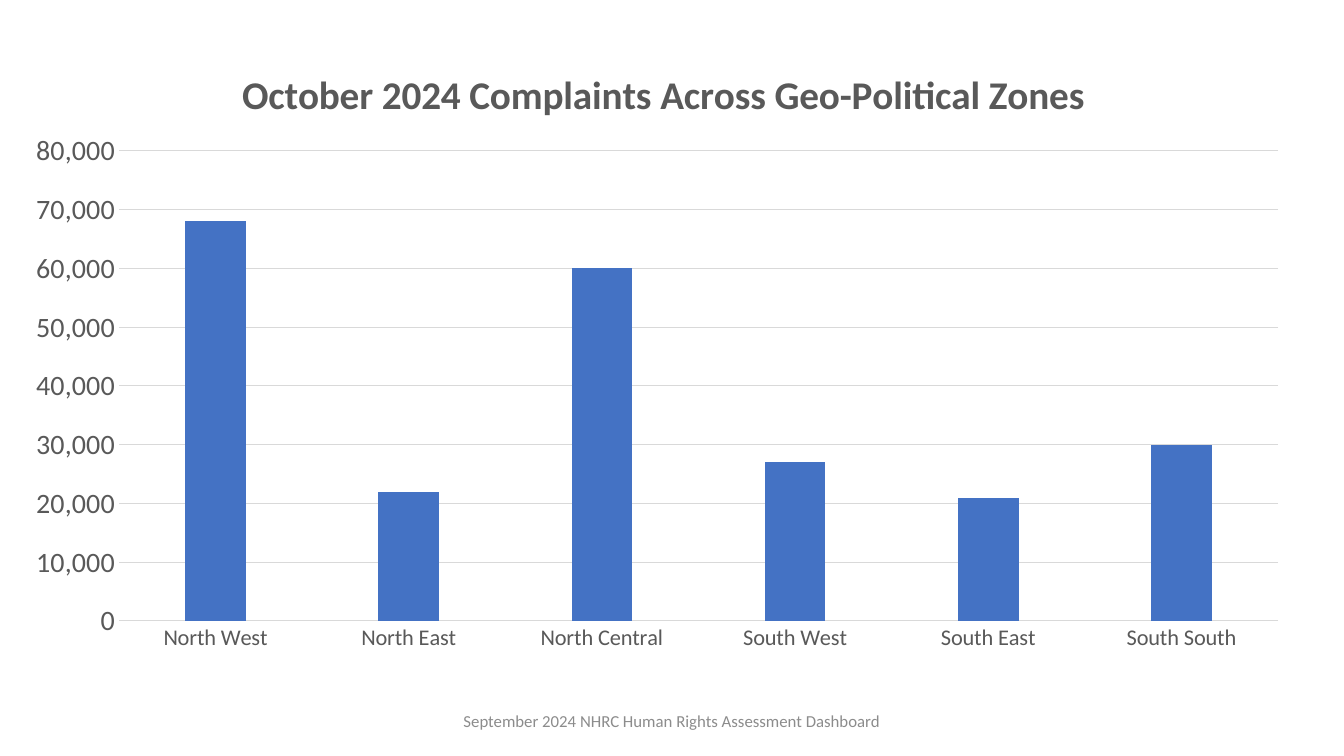
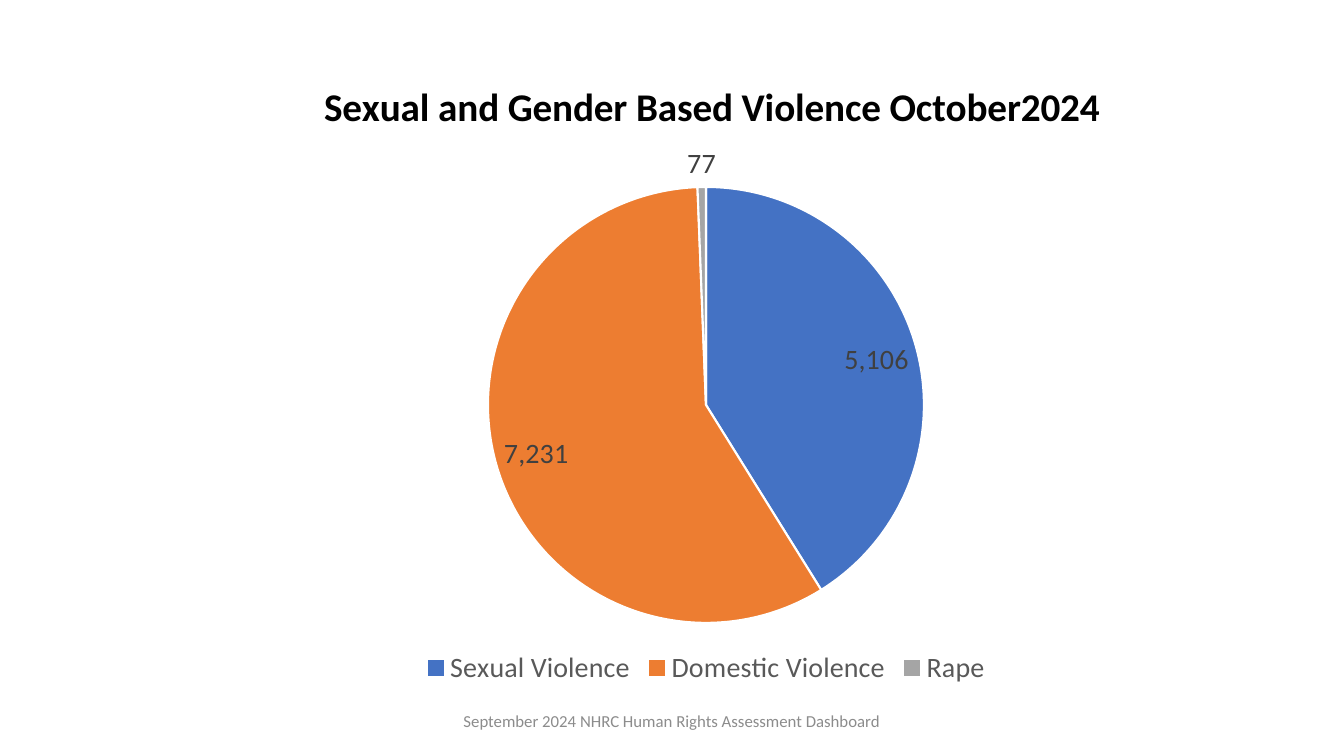
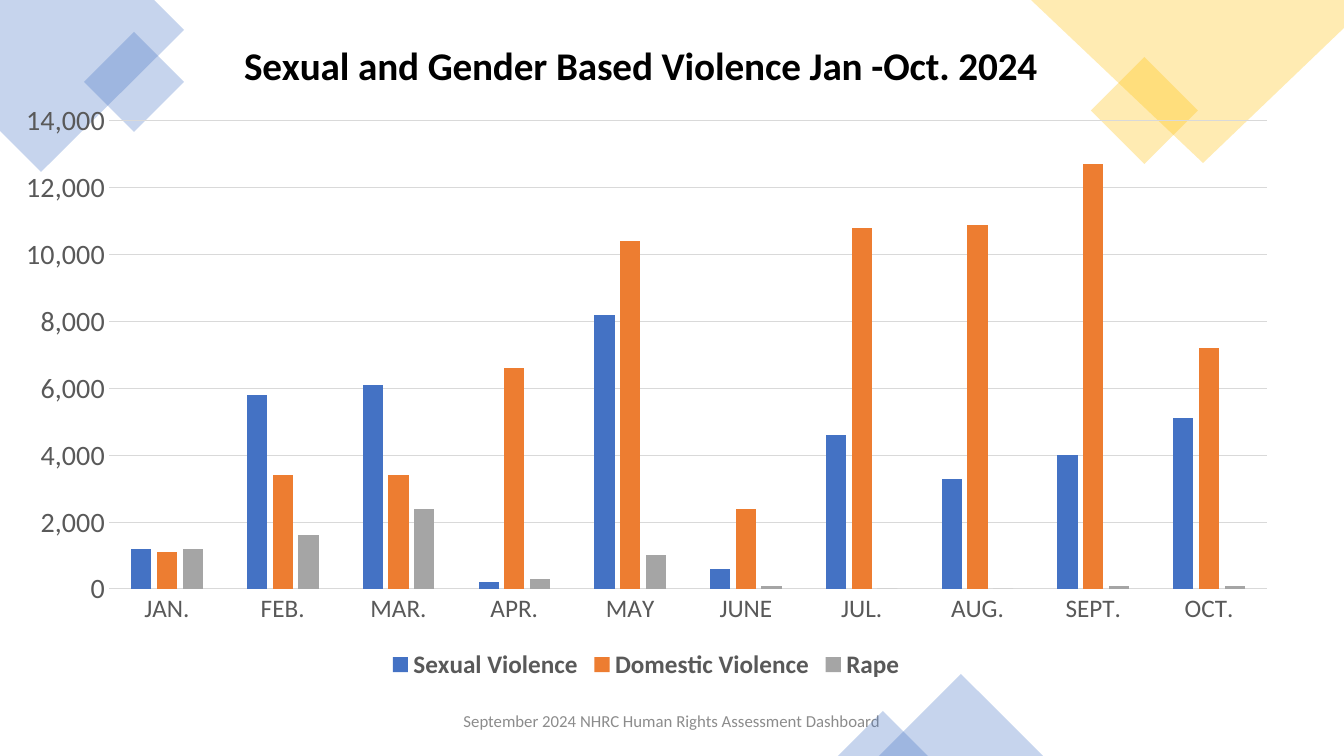
import pptx
import pptx.chart.data
import pptx.dml.color
import pptx.enum.chart
import pptx.enum.shapes
import pptx.enum.text
import pptx.oxml
import pptx.oxml.ns
import pptx.util

# Shared look
WIDE, HIGH = 1344, 756
SCALE = 12192000 / WIDE
FACE = "Calibri"
BLUE, ORANGE, GRAY, GOLD = "4472C4", "ED7D31", "A5A5A5", "FFC000"
INK, TEXT, DARK, RULE, PALE = "000000", "595959", "404040", "D9D9D9", "8C8C8C"
FOOT = "September 2024 NHRC Human Rights Assessment Dashboard"
COUNT = "#,##0"
KIND = pptx.enum.chart.XL_CHART_TYPE
SHAPE = pptx.enum.shapes.MSO_SHAPE
qn = pptx.oxml.ns.qn


def px(num):
    return pptx.util.Emu(round(num * SCALE))


def rgb(code):
    return pptx.dml.color.RGBColor.from_string(code)


def put(item, **vals):
    for name, val in vals.items():
        setattr(item, name, val)


def style(font, size, code, bold=False):
    put(font, name=FACE, size=pptx.util.Pt(size), bold=bold)
    font.color.rgb = rgb(code)


def paint(item, code):
    item.fill.solid()
    item.fill.fore_color.rgb = rgb(code)


# Decoration
def tint(shape, code):
    """Plain fill at 30 % opacity, with no line or shadow."""
    shape.shadow.inherit = False
    paint(shape, code)
    shape.line.fill.background()
    tone = shape.element.spPr.find(".//" + qn("a:srgbClr"))
    tone.append(pptx.oxml.parse_xml(
        f'<a:alpha {pptx.oxml.ns.nsdecls("a")} val="30000"/>'))


def patch(slide, kind, box, code):
    tint(slide.shapes.add_shape(kind, *map(px, box)), code)


def corner(slide, dots, code):
    form = slide.shapes.build_freeform(*dots[0], scale=SCALE)
    form.add_line_segments(dots[1:], close=True)
    tint(form.convert_to_shape(), code)


def footer(slide):
    box = slide.shapes.add_textbox(*map(px, (445, 701, 454, 40)))
    frame = box.text_frame
    put(frame, word_wrap=True, text=FOOT,
        vertical_anchor=pptx.enum.text.MSO_ANCHOR.MIDDLE)
    para = frame.paragraphs[0]
    para.alignment = pptx.enum.text.PP_ALIGN.CENTER
    style(para.runs[0].font, 12, PALE)


# Charts
def place(node, frame, box, inner=False):
    """Fix a chart part at a box of slide px; the size is optional."""
    left, top, wide, high = frame
    parts = [("x", (box[0] - left) / wide), ("y", (box[1] - top) / high)]
    if len(box) == 4:
        parts += [("w", box[2] / wide), ("h", box[3] / high)]
    rows = '<c:layoutTarget val="inner"/>' if inner else ""
    rows += "".join(f'<c:{key}Mode val="edge"/>' for key in "xy")
    rows += "".join(f'<c:{key} val="{val:.4f}"/>' for key, val in parts)
    for old in node.findall(qn("c:layout")):
        node.remove(old)
    spot = 0 if inner else 1
    node.insert(spot, pptx.oxml.parse_xml(
        f'<c:layout {pptx.oxml.ns.nsdecls("c")}><c:manualLayout>{rows}'
        '</c:manualLayout></c:layout>'))


def graph(slide, kind, frame, plot, cats, series, title, spot, code):
    data = pptx.chart.data.CategoryChartData(number_format=COUNT)
    data.categories = cats
    for name, vals in series:
        data.add_series(name, vals)
    chart = slide.shapes.add_chart(kind, *map(px, frame), data).chart
    style(chart.font, 10, INK)
    put(chart, has_title=True, has_legend=False)
    head = chart.chart_title
    head.text_frame.text = title
    style(head.text_frame.paragraphs[0].runs[0].font, 28, code, True)
    place(head.element, frame, spot)
    place(chart.element.find(".//" + qn("c:plotArea")), frame, plot, True)
    return chart


def legend(chart, size, bold=False):
    chart.has_legend = True
    put(chart.legend, include_in_layout=False,
        position=pptx.enum.chart.XL_LEGEND_POSITION.BOTTOM)
    style(chart.legend.font, size, TEXT, bold)


def line(fmt, code):
    fmt.color.rgb = rgb(code)
    fmt.width = pptx.util.Pt(0.75)


def bars(chart, codes, size, top, step):
    plot = chart.plots[0]
    put(plot, gap_width=219, overlap=-27, vary_by_categories=False)
    for row, code in zip(plot.series, codes):
        paint(row.format, code)
    none = pptx.enum.chart.XL_TICK_MARK.NONE
    for axis, points in ((chart.category_axis, size), (chart.value_axis, 20)):
        put(axis, major_tick_mark=none, minor_tick_mark=none)
        style(axis.tick_labels.font, points, TEXT)
    line(chart.category_axis.format.line, RULE)
    axis = chart.value_axis
    put(axis, minimum_scale=0, maximum_scale=top, major_unit=step,
        has_major_gridlines=True)
    put(axis.tick_labels, number_format=COUNT, number_format_is_linked=False)
    axis.format.line.fill.background()
    line(axis.major_gridlines.format.line, RULE)


def slices(chart, codes):
    plot = chart.plots[0]
    put(plot, vary_by_categories=True, has_data_labels=True)
    for num, code in enumerate(codes):
        part = plot.series[0].points[num].format
        paint(part, code)
        part.line.color.rgb = rgb("FFFFFF")
        part.line.width = pptx.util.Pt(1.5)
    put(plot.data_labels, show_value=True, show_percentage=False,
        number_format=COUNT, number_format_is_linked=False,
        position=pptx.enum.chart.XL_LABEL_POSITION.BEST_FIT)
    style(plot.data_labels.font, 20, DARK)


# Slides
def zones(slide):
    cats = ["North West", "North East", "North Central",
            "South West", "South East", "South South"]
    vals = [68000, 22000, 60000, 27000, 21000, 30000]
    chart = graph(slide, KIND.COLUMN_CLUSTERED, (10, 32, 1293, 633),
                  (119, 151, 1159, 470), cats, [("Series 1", vals)],
                  "October 2024 Complaints Across Geo-Political Zones",
                  (235, 61), TEXT)
    bars(chart, [BLUE], 16, 80000, 10000)


def month(slide):
    cats = ["Sexual Violence", "Domestic Violence", "Rape"]
    chart = graph(slide, KIND.PIE, (77, 43, 1258, 648),
                  (488, 187, 436, 436), cats,
                  [("Series 1", [5106, 7231, 77])],
                  "Sexual and Gender Based Violence October2024",
                  (317, 73), INK)
    slices(chart, [BLUE, ORANGE, GRAY])
    legend(chart, 20)


def trend(slide):
    corner(slide, [(0, 0), (154, 0), (184, 30), (41, 172), (0, 131)], BLUE)
    corner(slide, [(1031, 0), (1344, 0), (1344, 28), (1203, 163)], GOLD)
    for kind, box, code in (
            (SHAPE.DIAMOND, (84, 32, 100, 100), BLUE),
            (SHAPE.DIAMOND, (1091, 57, 107, 107), GOLD),
            (SHAPE.ISOSCELES_TRIANGLE, (879, 674, 164, 82), BLUE),
            (SHAPE.ISOSCELES_TRIANGLE, (838, 711, 90, 45), BLUE)):
        patch(slide, kind, box, code)
    cats = ["JAN.", "FEB.", "MAR.", "APR.", "MAY",
            "JUNE", "JUL.", "AUG.", "SEPT.", "OCT."]
    series = [
        ("Sexual Violence",
         [1200, 5800, 6100, 200, 8200, 600, 4600, 3300, 4000, 5100]),
        ("Domestic Violence",
         [1100, 3400, 3400, 6600, 10400, 2400, 10800, 10900, 12700, 7200]),
        ("Rape", [1200, 1600, 2400, 300, 1000, 100, 0, 0, 100, 100])]
    chart = graph(slide, KIND.COLUMN_CLUSTERED, (0, 15, 1292, 670),
                  (109, 121, 1158, 468), cats, series,
                  "Sexual and Gender Based Violence Jan -Oct. 2024",
                  (237, 32), INK)
    bars(chart, [BLUE, ORANGE, GRAY], 18, 14000, 2000)
    legend(chart, 18, True)


def main():
    deck = pptx.Presentation()
    put(deck, slide_width=px(WIDE), slide_height=px(HIGH))
    for build in (zones, month, trend):
        slide = deck.slides.add_slide(deck.slide_layouts[6])
        footer(slide)
        build(slide)
    deck.save("out.pptx")


if __name__ == "__main__":
    main()
